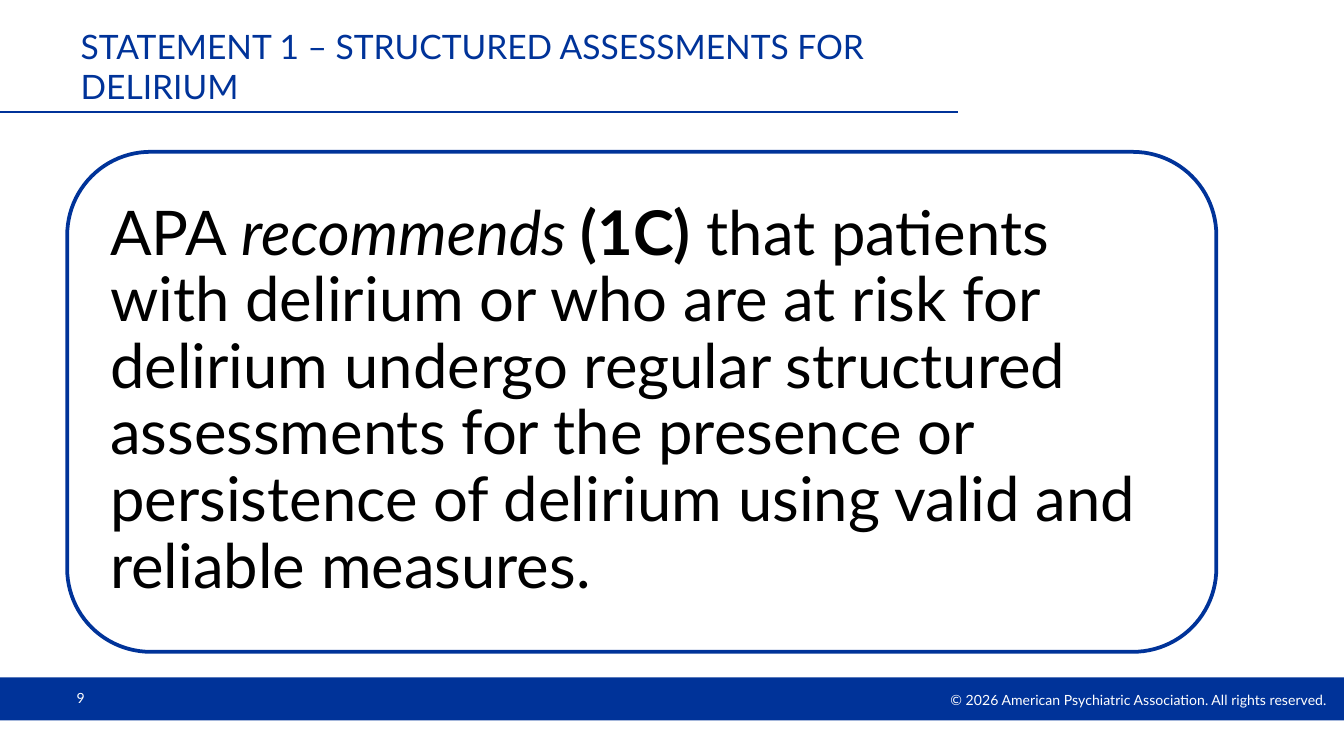
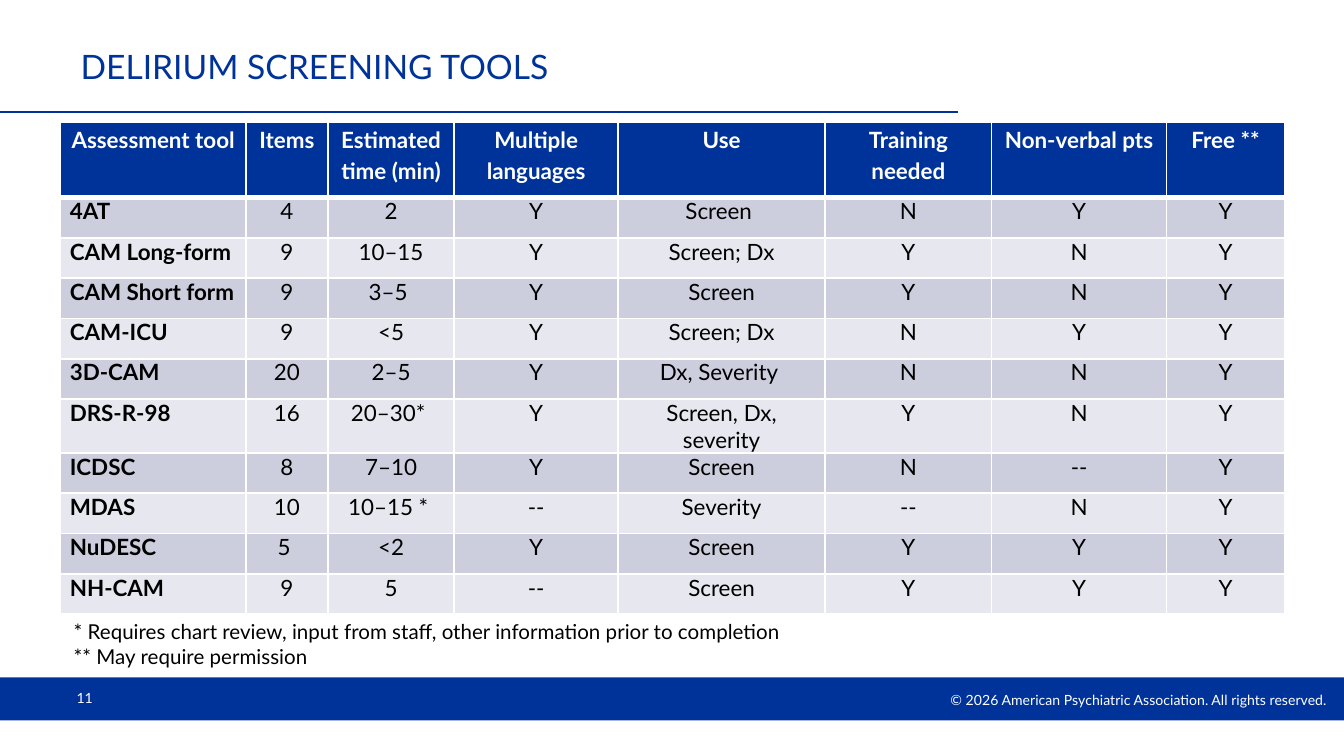
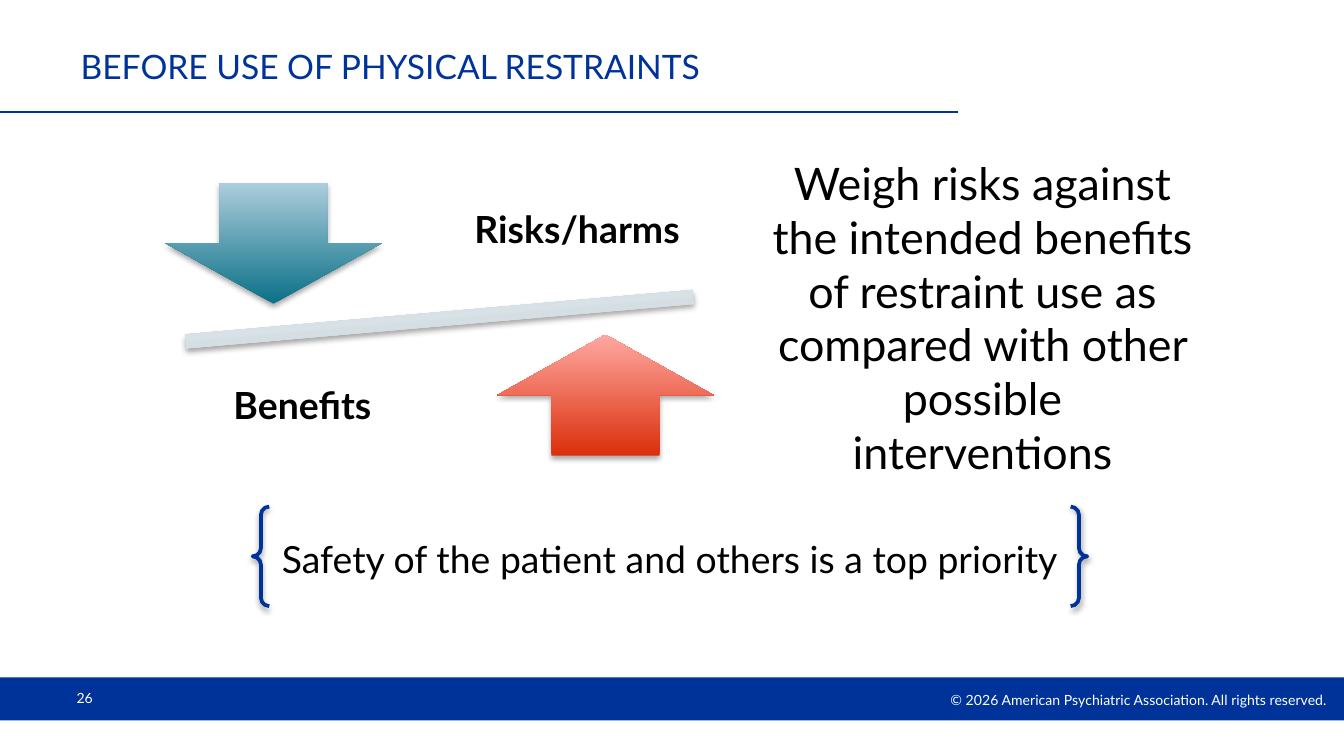
from lxml import etree
from pptx import Presentation
from pptx import util as u
from pptx.dml.color import RGBColor
from pptx.enum import shapes, text
from pptx.oxml import ns

NAVY = RGBColor(0x00, 0x33, 0x99)
WHITE = RGBColor(0xFF, 0xFF, 0xFF)
BLACK = RGBColor(0x00, 0x00, 0x00)
BAND_DARK = RGBColor(0xCC, 0xCE, 0xDE)
BAND_LIGHT = RGBColor(0xE7, 0xE8, 0xEF)
TEAL = RGBColor(0x0B, 0x70, 0x87), RGBColor(0xAC, 0xCD, 0xDC)
RED = RGBColor(0xDB, 0x2F, 0x0B), RGBColor(0xFF, 0xA8, 0xA2)
GREY = RGBColor(0xCB, 0xD4, 0xD8), RGBColor(0xE2, 0xED, 0xF1)

FONT = "Lato"
WIDTH = 10
HEIGHT = WIDTH * 9 / 16
MARGIN = 0.5
BAND_TOP, BAND_HEIGHT = 5.04, 0.32
RULE_TOP = WIDTH / 12
TITLE_END = 7.13
LEFT, CENTER, RIGHT = text.PP_ALIGN.LEFT, text.PP_ALIGN.CENTER, text.PP_ALIGN.RIGHT
TOP, MIDDLE = text.MSO_ANCHOR.TOP, text.MSO_ANCHOR.MIDDLE
PRESET = shapes.MSO_SHAPE

COPYRIGHT = "© 2026 American Psychiatric Association. All rights reserved."

STATEMENT = [
    ("APA ", {}),
    ("recommends ", {"italic": True}),
    ("(1C)", {"bold": True}),
    (" that patients with delirium or who are at risk for delirium undergo "
     "regular structured assessments for the presence or persistence of "
     "delirium using valid and reliable measures.", {}),
]

TOOL_COLUMNS = [
    ("Assessment tool", 1.38), ("Items", 0.61), ("Estimated time (min)", 0.94),
    ("Multiple languages", 1.22), ("Use", 1.54), ("Training needed", 1.24),
    ("Non-verbal pts", 1.3), ("Free **", 0.88),
]
TOOLS = [
    ("4AT", "4", "2", "Y", "Screen ", "N", "Y", "Y"),
    ("CAM Long-form", "9", "10–15", "Y", "Screen; Dx", "Y", "N", "Y"),
    ("CAM Short form", "9", "3–5 ", "Y", "Screen", "Y", "N", "Y"),
    ("CAM-ICU", "9", "<5", "Y", "Screen; Dx", "N", "Y", "Y"),
    ("3D-CAM", "20", "2–5", "Y", "Dx, Severity ", "N", "N", "Y"),
    ("DRS-R-98", "16", "20–30* ", "Y", "Screen, Dx, severity", "Y", "N", "Y"),
    ("ICDSC", "8", "7–10", "Y", "Screen", "N", "--", "Y"),
    ("MDAS", "10", "10–15 * ", "--", "Severity", "--", "N", "Y"),
    ("NuDESC", "5 ", "<2", "Y", "Screen", "Y", "Y", "Y"),
    ("NH-CAM", "9", "5", "--", "Screen", "Y", "Y", "Y"),
]
TOOL_NOTES = [
    "* Requires chart review, input from staff, other information prior to completion",
    "** May require permission",
]

BALANCE = [
    (PRESET.MATH_MINUS, (0.69, 2.15, 5.16, 0.45), GREY, 355),
    (PRESET.DOWN_ARROW, (1.23, 1.36, 1.61, 0.9), TEAL, 0),
    (PRESET.UP_ARROW, (3.7, 2.49, 1.61, 0.9), RED, 0),
]
BALANCE_LABELS = [
    ("Risks/harms", (3.31, 1.25, 1.97, 0.94)),
    ("Benefits", (1.39, 2.56, 1.72, 0.94)),
]
ADVICE = ("Weigh risks against the intended benefits of restraint use as "
          "compared with other possible interventions")
PRIORITY = "Safety of the patient and others is a top priority"


def inches(box):
    return [u.Inches(length) for length in box]


def write(frame, paragraphs, size, color=BLACK, bold=False, align=LEFT,
          anchor=TOP, spacing=None, insets=(0.1, 0.05, 0.1, 0.05)):
    frame.word_wrap = True
    frame.vertical_anchor = anchor
    (frame.margin_left, frame.margin_top,
     frame.margin_right, frame.margin_bottom) = inches(insets)
    if isinstance(paragraphs, str):
        paragraphs = [paragraphs]
    for index, runs in enumerate(paragraphs):
        paragraph = frame.add_paragraph() if index else frame.paragraphs[0]
        paragraph.alignment = align
        paragraph.line_spacing = spacing
        for words, style in [(runs, {})] if isinstance(runs, str) else runs:
            run = paragraph.add_run()
            run.text = words
            run.font.name = FONT
            run.font.size = u.Pt(size)
            run.font.color.rgb = color
            run.font.bold = style.get("bold", bold)
            run.font.italic = style.get("italic", False)


def add_text(slide, box, paragraphs, **format):
    write(slide.shapes.add_textbox(*inches(box)).text_frame, paragraphs, **format)


def add_preset(slide, preset, box, fill=None, line=None, shadow=None):
    shape = slide.shapes.add_shape(preset, *inches(box))
    shape.shadow.inherit = False
    if isinstance(fill, RGBColor):
        shape.fill.solid()
        shape.fill.fore_color.rgb = fill
    elif fill:
        shape.fill.gradient()
        shape.fill.gradient_angle = 90
        for stop, color in zip(shape.fill.gradient_stops, fill):
            stop.color.rgb = color
    else:
        shape.fill.background()
    if line:
        shape.line.color.rgb = line
        shape.line.width = u.Pt(2)
    else:
        shape.line.fill.background()
    if shadow:
        distance, opacity = shadow
        effects = shape._element.spPr.find(ns.qn("a:effectLst"))
        outer = etree.SubElement(
            effects, ns.qn("a:outerShdw"), blurRad=str(u.Pt(3.1)),
            dist=str(u.Pt(distance)), dir="5400000", rotWithShape="0")
        tint = etree.SubElement(outer, ns.qn("a:srgbClr"), val=str(BLACK))
        etree.SubElement(tint, ns.qn("a:alpha"), val=str(opacity * 1000))
    return shape


def add_page(deck, title, number):
    slide = deck.slides.add_slide(deck.slide_layouts[5])
    add_preset(slide, PRESET.RECTANGLE, (0, BAND_TOP, WIDTH, BAND_HEIGHT), fill=NAVY)
    rule = slide.shapes.add_connector(
        shapes.MSO_CONNECTOR.STRAIGHT, *inches((0, RULE_TOP, TITLE_END, RULE_TOP)))
    rule.line.color.rgb = NAVY
    rule.line.width = u.Pt(0.75)
    etree.SubElement(rule._element.spPr, ns.qn("a:effectLst"))
    small = {"size": 7.5, "color": WHITE, "anchor": MIDDLE}
    add_text(slide, (5.63, 5.09, WIDTH - 5.63, 0.23), COPYRIGHT, align=RIGHT,
             insets=(0.1, 0.05, 0.13, 0.05), **small)
    add_text(slide, (MARGIN, BAND_TOP, 2.33, 0.3), str(number),
             insets=(0.07, 0.04, 0.07, 0.04), **small)
    heading = slide.shapes.title
    heading.left, heading.top, heading.width, heading.height = inches(
        (MARGIN, 0.25, TITLE_END - MARGIN, 0.48))
    heading.text_frame.auto_size = text.MSO_AUTO_SIZE.NONE
    write(heading.text_frame, title, size=18, color=NAVY, anchor=MIDDLE)
    return slide


def set_borders(cell, **widths):
    properties = cell._tc.get_or_add_tcPr()
    for side in "LRTB":
        edge = etree.SubElement(properties, ns.qn(f"a:ln{side}"),
                                w=str(u.Pt(widths.get(side, 1))))
        paint = etree.SubElement(edge, ns.qn("a:solidFill"))
        etree.SubElement(paint, ns.qn("a:srgbClr"), val=str(WHITE))


def add_tools(slide, left, top, header_height, row_height):
    names, widths = zip(*TOOL_COLUMNS)
    rows = [names, *TOOLS]
    box = (left, top, sum(widths), header_height + row_height * len(TOOLS))
    table = slide.shapes.add_table(len(rows), len(names), *inches(box)).table
    for column, width in zip(table.columns, widths):
        column.width = u.Inches(width)
    for r, values in enumerate(rows):
        header = r == 0
        table.rows[r].height = u.Inches(header_height if header else row_height)
        for c, value in enumerate(values):
            cell = table.cell(r, c)
            set_borders(cell, B=3 if header else 1, T=3 if r == 1 else 1)
            cell.fill.solid()
            cell.fill.fore_color.rgb = (
                NAVY if header else BAND_DARK if r % 2 else BAND_LIGHT)
            insets = (0.07, 0, 0.07, 0)
            (cell.margin_left, cell.margin_top,
             cell.margin_right, cell.margin_bottom) = inches(insets)
            write(cell.text_frame, value, size=12, insets=insets,
                  color=WHITE if header else BLACK, bold=header or c == 0,
                  align=CENTER if header or c else LEFT,
                  spacing=1.15 if header else None)


def add_statement_page(deck):
    slide = add_page(deck, "STATEMENT 1 – STRUCTURED ASSESSMENTS FOR DELIRIUM", 9)
    left, top, width, height = MARGIN, 1.13, 8.55, 3.72
    pad = 0.18
    add_preset(slide, PRESET.ROUNDED_RECTANGLE, (left, top, width, height), line=NAVY)
    add_text(slide, (left + pad, top + pad, width - 2 * pad, height - 2 * pad),
             [STATEMENT], size=33, anchor=MIDDLE, spacing=0.9, insets=(0.14,) * 4)


def add_tools_page(deck):
    slide = add_page(deck, "DELIRIUM SCREENING TOOLS", 11)
    add_tools(slide, left=0.45, top=0.91, header_height=0.56, row_height=0.3)
    add_text(slide, (0.45, 4.56, 6.33, 0.47), TOOL_NOTES, size=11)


def add_restraints_page(deck):
    slide = add_page(deck, "BEFORE USE OF PHYSICAL RESTRAINTS", 26)
    add_text(slide, (1.27, 3.94, 7.43, 0.44), PRIORITY, size=20, align=CENTER)
    for preset, box, colors, angle in BALANCE:
        part = add_preset(slide, preset, box, fill=colors, shadow=(1.8, 35))
        part.rotation = angle
    for label, box in BALANCE_LABELS:
        add_text(slide, box, label, size=20, bold=True, align=CENTER,
                 anchor=MIDDLE, spacing=0.9, insets=(0.16,) * 4)
    add_text(slide, (5.64, 1.11, 3.34, 2.52), ADVICE, size=24, align=CENTER)
    add_preset(slide, PRESET.DOUBLE_BRACE, (1.88, 3.77, 6.21, 0.74),
               line=NAVY, shadow=(1.6, 38))


def main():
    deck = Presentation()
    deck.slide_width, deck.slide_height = inches((WIDTH, HEIGHT))
    add_statement_page(deck)
    add_tools_page(deck)
    add_restraints_page(deck)
    deck.save("out.pptx")


if __name__ == "__main__":
    main()
